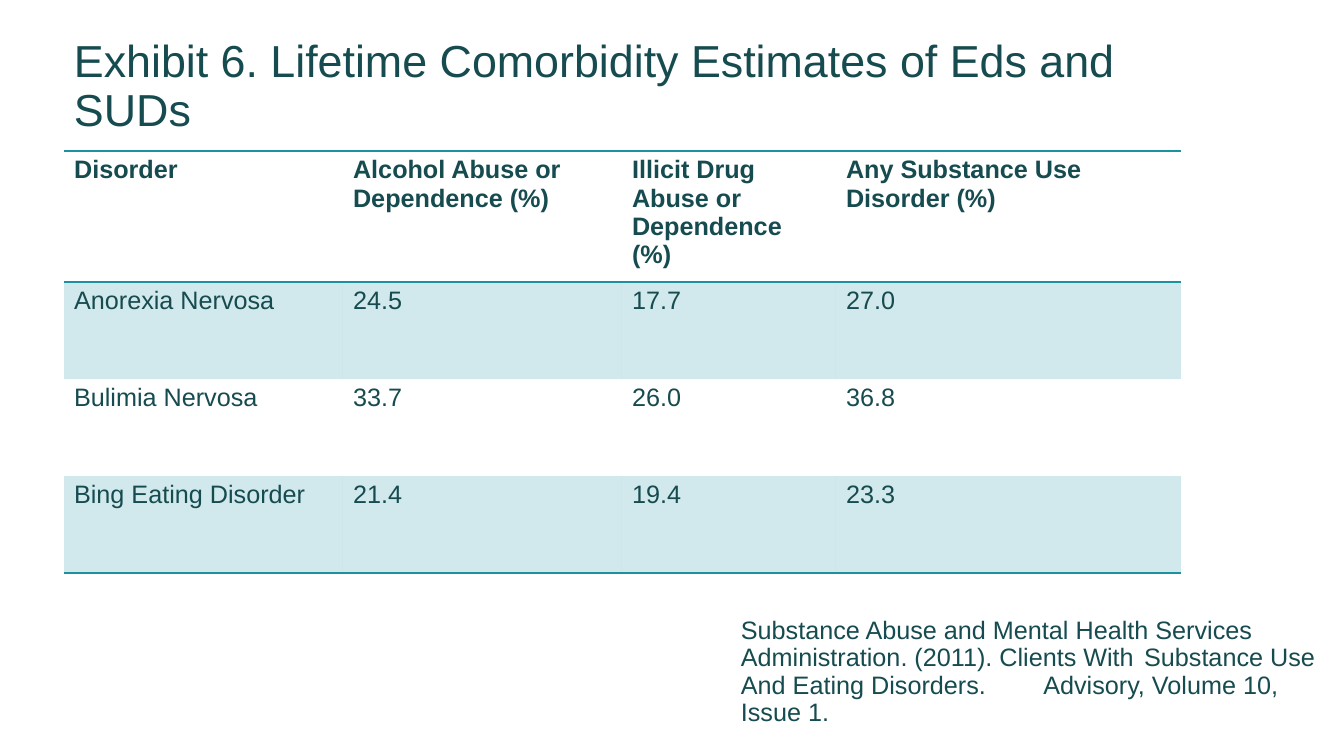
from lxml import etree
from pptx import Presentation, util as u
from pptx.dml.color import RGBColor
from pptx.enum import text
from pptx.oxml.ns import qn

INK = RGBColor(0x16, 0x4B, 0x4F)
TEAL = RGBColor(0x1B, 0x91, 0xA1)
NO_STYLE = "{2D5ABB26-0587-4C30-8999-92F81FD0307C}"


def px(*lengths):
    return [u.Emu(round(length * 914400 / 100.8)) for length in lengths]


def set_font(paragraph, size, bold=False):
    paragraph.font.name = "Arial"
    paragraph.font.size = u.Pt(size)
    paragraph.font.bold = bold
    paragraph.font.color.rgb = INK


deck = Presentation()
deck.slide_width, deck.slide_height = px(1344, 756)
slide = deck.slides.add_slide(deck.slide_layouts[6])

passages = [
    ((64, 23, 1142, 118), 32, text.MSO_ANCHOR.BOTTOM,
     "Exhibit 6. Lifetime Comorbidity Estimates of Eds and SUDs"),
    ((731, 613, 622, 120), 18, text.MSO_ANCHOR.TOP,
     "Substance Abuse and Mental Health Services \tAdministration. (2011). "
     "Clients With \tSubstance Use And Eating Disorders. \tAdvisory, Volume 10, Issue 1."),
]
for place, size, anchor, wording in passages:
    frame = slide.shapes.add_textbox(*px(*place)).text_frame
    frame.word_wrap = True
    frame.vertical_anchor = anchor
    frame.text = wording
    frame.paragraphs[0].line_spacing = 0.9
    set_font(frame.paragraphs[0], size)

estimates = [
    ("Disorder", "Alcohol Abuse or Dependence (%)",
     "Illicit Drug Abuse or Dependence (%)", "Any Substance Use Disorder (%)"),
    ("Anorexia Nervosa", "24.5", "17.7", "27.0"),
    ("Bulimia Nervosa", "33.7", "26.0", "36.8"),
    ("Bing Eating Disorder", "21.4", "19.4", "23.3"),
]
edges = {0: ("a:lnT", "a:lnB"), len(estimates) - 1: ("a:lnB",)}
table = slide.shapes.add_table(4, 4, *px(64, 151, 1117, 388)).table
table._tbl.tblPr.find(qn("a:tableStyleId")).text = NO_STYLE
for column, width in zip(table.columns, px(279, 279, 214, 345)):
    column.width = width

for r, estimate in enumerate(estimates):
    table.rows[r].height = px(97)[0]
    for c, value in enumerate(estimate):
        cell = table.cell(r, c)
        cell.text = value
        set_font(cell.text_frame.paragraphs[0], 18, bold=r == 0)
        properties = cell._tc.get_or_add_tcPr()
        for edge in edges.get(r, ()):
            line = etree.SubElement(properties, qn(edge), w=str(u.Pt(1)))
            paint = etree.SubElement(line, qn("a:solidFill"))
            etree.SubElement(paint, qn("a:srgbClr"), val=str(TEAL))
        if r % 2:
            cell.fill.solid()
            cell.fill.fore_color.rgb = TEAL
            tint = properties.find(qn("a:solidFill")).find(qn("a:srgbClr"))
            etree.SubElement(tint, qn("a:alpha"), val="20000")
        else:
            cell.fill.background()

deck.save("out.pptx")
